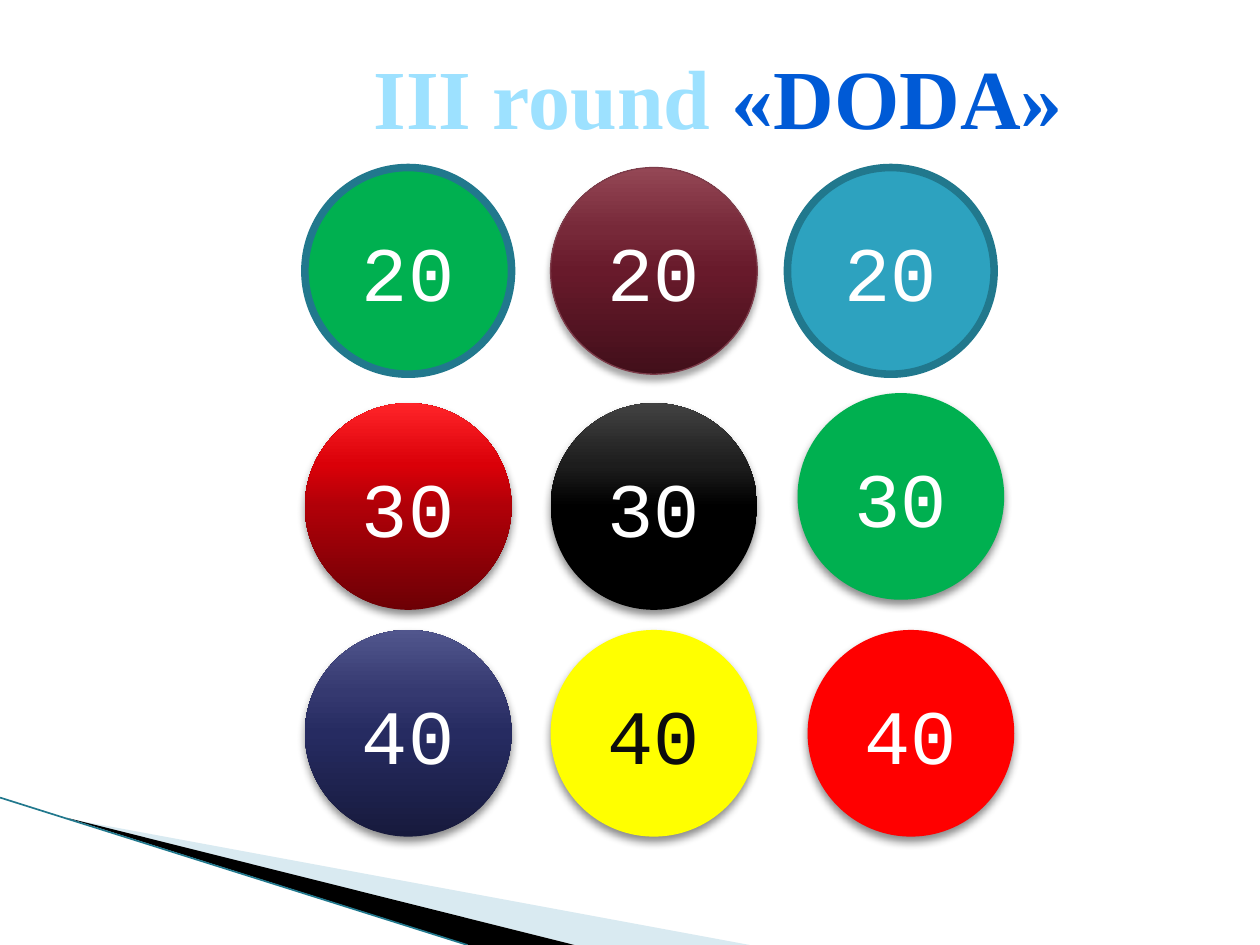
from lxml import etree
from pptx import Presentation
from pptx import util as u
from pptx.dml.color import RGBColor
from pptx.enum import shapes, text
from pptx.oxml import parse_xml
from pptx.oxml.ns import nsdecls, qn

SKY = RGBColor(0x9D, 0xE1, 0xFF)
BLUE = RGBColor(0x00, 0x5A, 0xD6)
WHITE = RGBColor(0xFF, 0xFF, 0xFF)
INK = RGBColor(0x0D, 0x0D, 0x0D)
BLACK = RGBColor(0x00, 0x00, 0x00)
PALE = RGBColor(0xA0, 0xCB, 0xDC)
TEAL = RGBColor(0x21, 0x78, 0x8D)
AQUA = RGBColor(0x2D, 0xA2, 0xBF)
GREEN = RGBColor(0x00, 0xB0, 0x50)
YELLOW = RGBColor(0xFF, 0xFF, 0x00)
RED = RGBColor(0xFF, 0x00, 0x00)
ROSE = RGBColor(0x7D, 0x3C, 0x4A)
# Gradients run from the bottom of a ball to its top
STOPS = (0, 50, 70, 100)
WINE = [RGBColor.from_string(c) for c in ("420F1A", "681A2B", "772939", "944755")]
CRIMSON = [RGBColor.from_string(c) for c in ("6D0005", "B00008", "DA0008", "FF2429")]
COAL = [RGBColor.from_string(c) for c in ("000000", "000000", "1D1D1D", "424242")]
NAVY = [RGBColor.from_string(c) for c in ("171A3D", "262B61", "353970", "51568D")]


def add_text(para, words, font, size, color, bold=False):
    para.alignment = text.PP_ALIGN.CENTER
    span = para.add_run()
    span.text = words
    span.font.name = font
    span.font.size = u.Pt(size)
    span.font.bold = bold
    span.font.color.rgb = color


def add_effects(shape, shadow=None):
    effects = etree.SubElement(shape._element.spPr, qn("a:effectLst"))
    if shadow:
        alpha, blur = shadow
        effects.append(parse_xml(
            f'<a:outerShdw {nsdecls("a")} blurRad="{u.Pt(blur)}" dist="{u.Pt(3)}" '
            f'dir="5400000" algn="ctr" rotWithShape="0"><a:srgbClr val="000000">'
            f'<a:alpha val="{alpha * 1000}"/></a:srgbClr></a:outerShdw>'))


deck = Presentation()
deck.slide_width, deck.slide_height = u.Inches(10), u.Inches(7.5)
page = deck.slides.add_slide(deck.slide_layouts[5])

# Corner wedges, in hundredths of an inch
wedges = [
    ([(55, 650), (595, 750), (456, 750)], PALE, 40),
    ([(53, 649), (456, 750), (372, 750)], BLACK, 100),
]
for points, color, opacity in wedges:
    outline = page.shapes.build_freeform(*points[0], scale=u.Inches(0.01))
    outline.add_line_segments(points[1:], close=True)
    wedge = outline.convert_to_shape()
    wedge.shadow.inherit = False
    wedge.fill.solid()
    wedge.fill.fore_color.rgb = color
    wedge.line.fill.background()
    if opacity < 100:
        tint = wedge._element.spPr.find(qn("a:solidFill"))[0]
        etree.SubElement(tint, qn("a:alpha")).set("val", str(opacity * 1000))

# Corner edge line
edge = page.shapes.add_connector(shapes.MSO_CONNECTOR.STRAIGHT, u.Inches(0),
                                 u.Inches(6.33), u.Inches(3.71), u.Inches(7.5))
edge.line.color.rgb = TEAL
edge.line.width = u.Pt(0.95)
add_effects(edge)

# Title
title = page.shapes.title
title.left, title.top = u.Inches(2.34), u.Inches(0.31)
title.width, title.height = u.Inches(6.72), u.Inches(0.91)
title.text_frame.auto_size = text.MSO_AUTO_SIZE.NONE
title.text_frame.vertical_anchor = text.MSO_ANCHOR.TOP
heading = title.text_frame.paragraphs[0]
for words, color in (("ІІI round ", SKY), ("«DODA»", BLUE)):
    add_text(heading, words, font="Times New Roman", size=48, color=color, bold=True)

# Score balls: left, top, score, fill, (line colour, width), (shadow alpha, blur)
SOFT = (45, 5)
balls = [
    (2.42, 1.33, "20", GREEN, (TEAL, 4.33), None),
    (4.37, 1.33, "20", WINE, (ROSE, 0.75), (35, 4)),
    (6.25, 1.33, "20", AQUA, (TEAL, 4.33), None),
    (2.42, 3.2, "30", CRIMSON, None, SOFT),
    (4.37, 3.2, "30", COAL, None, SOFT),
    (6.33, 3.12, "30", GREEN, None, SOFT),
    (2.42, 5, "40", NAVY, None, SOFT),
    (4.37, 5, "40", YELLOW, None, SOFT),
    (6.41, 5, "40", RED, None, SOFT),
]
for left, top, score, fill, border, shadow in balls:
    ball = page.shapes.add_shape(shapes.MSO_SHAPE.OVAL, u.Inches(left), u.Inches(top),
                                 u.Inches(1.64), u.Inches(1.64))
    if isinstance(fill, list):
        ball.fill.gradient()
        ball.fill.gradient_angle = 90
        stops = ball._element.spPr.find(qn("a:gradFill")).find(qn("a:gsLst"))
        for stop in list(stops):
            stops.remove(stop)
        for place, color in zip(STOPS, fill):
            stop = etree.SubElement(stops, qn("a:gs"), pos=str(place * 1000))
            etree.SubElement(stop, qn("a:srgbClr"), val=str(color))
    else:
        ball.fill.solid()
        ball.fill.fore_color.rgb = fill
    if border:
        ball.line.color.rgb = border[0]
        ball.line.width = u.Pt(border[1])
    else:
        ball.line.fill.background()
    add_effects(ball, shadow)
    ball.text_frame.vertical_anchor = text.MSO_ANCHOR.MIDDLE
    add_text(ball.text_frame.paragraphs[0], score, font="Courier New", size=44,
             color=INK if fill == YELLOW else WHITE)

deck.save("out.pptx")
